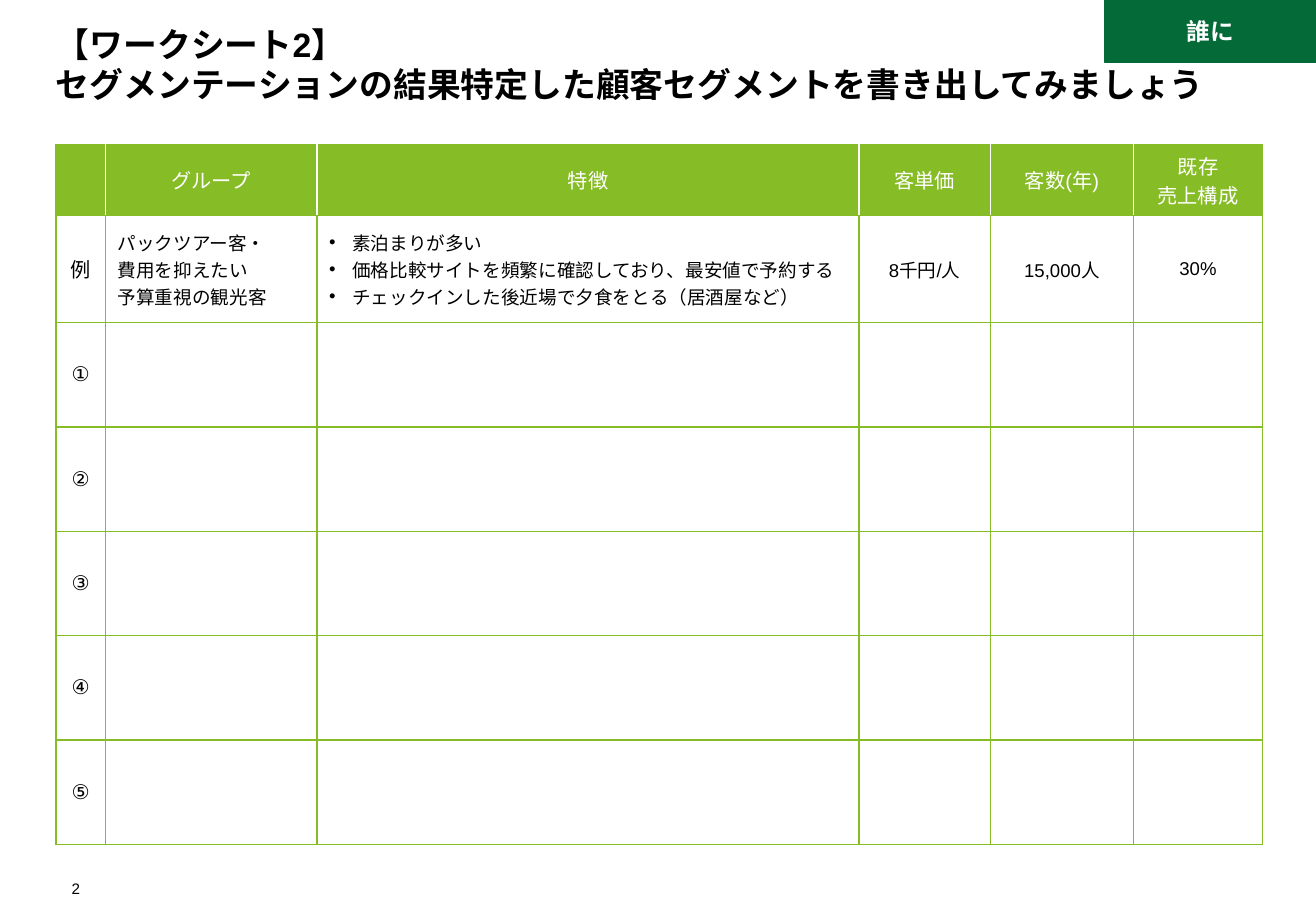
"""Builds the worksheet slide for listing customer segments."""
from lxml import etree
from pptx import Presentation
from pptx.dml.color import RGBColor
from pptx.enum.shapes import MSO_SHAPE
from pptx.enum.text import MSO_ANCHOR, MSO_AUTO_SIZE, PP_ALIGN
from pptx.oxml.ns import qn
from pptx.util import Inches, Pt

RECTANGLE = MSO_SHAPE.RECTANGLE
MIDDLE, BOTTOM = MSO_ANCHOR.MIDDLE, MSO_ANCHOR.BOTTOM
LEFT, CENTER, RIGHT = PP_ALIGN.LEFT, PP_ALIGN.CENTER, PP_ALIGN.RIGHT
FIXED_SIZE = MSO_AUTO_SIZE.NONE
COLORS = {"text": "000000", "white": "FFFFFF", "lime": "86BC25", "forest": "046A38"}
UNIT = Inches(0.1)
SLIDE_COLUMNS, SLIDE_ROWS = 108.3, 75
MARGIN = 4.6
COLUMN_WIDTHS = [4.1, 17.4, 44.6, 10.8, 11.8, 10.6]
ROW_HEIGHTS = [5.8, 8.8] + [8.6] * 5
HEADERS = ["", "グループ", "特徴", "客単価", "客数(年)", "既存\n売上構成"]
EXAMPLE = [
    "例",
    "パックツアー客・\v費用を抑えたい\v予算重視の観光客",
    "素泊まりが多い\n価格比較サイトを頻繁に確認しており、最安値で予約する\n"
    "チェックインした後近場で夕食をとる（居酒屋など）",
    "8千円/人",
    "15,000人",
    "30%",
]
ENTRY_NUMBERS = "①②③④⑤"


def grid(*units):
    """Converts grid units to lengths."""
    return [round(unit * UNIT) for unit in units]


def rgb(color):
    """Looks up a named colour."""
    return RGBColor.from_string(COLORS[color])


def write(frame, text, size=12, color="text", bold=False, align=LEFT, bullet=False, spacing=None):
    """Fills a text frame with formatted paragraphs."""
    frame.text = text
    for paragraph in frame.paragraphs:
        if bullet:
            properties = paragraph._p.get_or_add_pPr()
            properties.set("marL", str(Inches(0.19)))
            properties.set("indent", str(-Inches(0.19)))
            etree.SubElement(properties, qn("a:buFont")).set("typeface", "Arial")
            etree.SubElement(properties, qn("a:buChar")).set("char", "•")
        paragraph.alignment = align
        if spacing:
            paragraph.line_spacing = Pt(spacing)
        for run in paragraph.runs:
            run.font.name = "Arial"
            run.font.size = Pt(size)
            run.font.bold = bold
            run.font.color.rgb = rgb(color)


def set_frame(frame, anchor, inset, wrap=True):
    """Sets the anchor, insets and wrapping of a text frame."""
    frame.auto_size = FIXED_SIZE
    frame.word_wrap = wrap
    frame.vertical_anchor = anchor
    frame.margin_left = frame.margin_right = Inches(inset)
    frame.margin_top = frame.margin_bottom = Inches(inset)


def set_borders(cell, left="lime", right="lime"):
    """Draws the four borders of a cell."""
    properties = cell._tc.get_or_add_tcPr()
    for side, color in zip("LRTB", (left, right, "lime", "lime")):
        line = etree.SubElement(properties, qn(f"a:ln{side}"), w=str(Pt(1)))
        fill = etree.SubElement(line, qn("a:solidFill"))
        etree.SubElement(fill, qn("a:srgbClr"), val=COLORS[color])


class Worksheet:
    """Holds the slide and adds its elements."""

    def __init__(self):
        self.presentation = Presentation()
        self.presentation.slide_width, self.presentation.slide_height = grid(SLIDE_COLUMNS, SLIDE_ROWS)
        self.slide = self.presentation.slides.add_slide(self.presentation.slide_layouts[5])

    def title(self, text, *box):
        """Places and formats the title."""
        shape = self.slide.shapes.title
        shape.left, shape.top, shape.width, shape.height = grid(*box)
        set_frame(shape.text_frame, BOTTOM, 0)
        write(shape.text_frame, text, size=20, bold=True, spacing=24)

    def page_number(self, text, *box):
        """Adds the page number."""
        shape = self.slide.shapes.add_textbox(*grid(*box))
        set_frame(shape.text_frame, BOTTOM, 0, wrap=False)
        write(shape.text_frame, text, size=9, align=RIGHT)

    def tag(self, text, *box):
        """Adds the filled corner tag."""
        shape = self.slide.shapes.add_shape(RECTANGLE, *grid(*box))
        shape.shadow.inherit = False
        shape.fill.solid()
        shape.fill.fore_color.rgb = shape.line.color.rgb = rgb("forest")
        shape.line.width = Pt(1)
        set_frame(shape.text_frame, MIDDLE, 0.08)
        write(shape.text_frame, text, size=14, color="white", bold=True, align=CENTER)

    def table(self, left, top):
        """Adds the segment table."""
        box = grid(left, top, sum(COLUMN_WIDTHS), sum(ROW_HEIGHTS))
        table = self.slide.shapes.add_table(len(ROW_HEIGHTS), len(COLUMN_WIDTHS), *box).table
        table.first_row = table.horz_banding = False
        for column, width in zip(table.columns, grid(*COLUMN_WIDTHS)):
            column.width = width
        for row, height in zip(table.rows, grid(*ROW_HEIGHTS)):
            row.height = height
        last = len(COLUMN_WIDTHS) - 1
        for index, text in enumerate(HEADERS):
            cell = table.cell(0, index)
            set_borders(cell, "white" if index else "lime", "white" if index < last else "lime")
            cell.fill.solid()
            cell.fill.fore_color.rgb = rgb("lime")
            self.cell_text(cell, text, color="white", align=CENTER)
        entries = [[number] + [""] * last for number in ENTRY_NUMBERS]
        for row, texts in enumerate([EXAMPLE] + entries, 1):
            for index, text in enumerate(texts):
                cell = table.cell(row, index)
                set_borders(cell)
                cell.fill.background()
                self.cell_text(cell, text, size=11 if index else 12, bullet=bool(text) and index == 2,
                               align=LEFT if index in (1, 2) else CENTER)

    def cell_text(self, cell, text, **style):
        """Writes vertically centred text in a cell."""
        cell.vertical_anchor = MIDDLE
        write(cell.text_frame, text, **style)


def main():
    """Builds and saves the slide."""
    sheet = Worksheet()
    sheet.page_number("2", MARGIN, 72, 2, 1.9)
    sheet.title("【ワークシート2】\vセグメンテーションの結果特定した顧客セグメントを書き出してみましょう",
                MARGIN, 1.5, 99.2, 7.1)
    sheet.table(MARGIN, 11.9)
    sheet.tag("誰に", SLIDE_COLUMNS - 17.4, 0, 17.4, 5.1)
    sheet.presentation.save("out.pptx")


if __name__ == "__main__":
    main()
